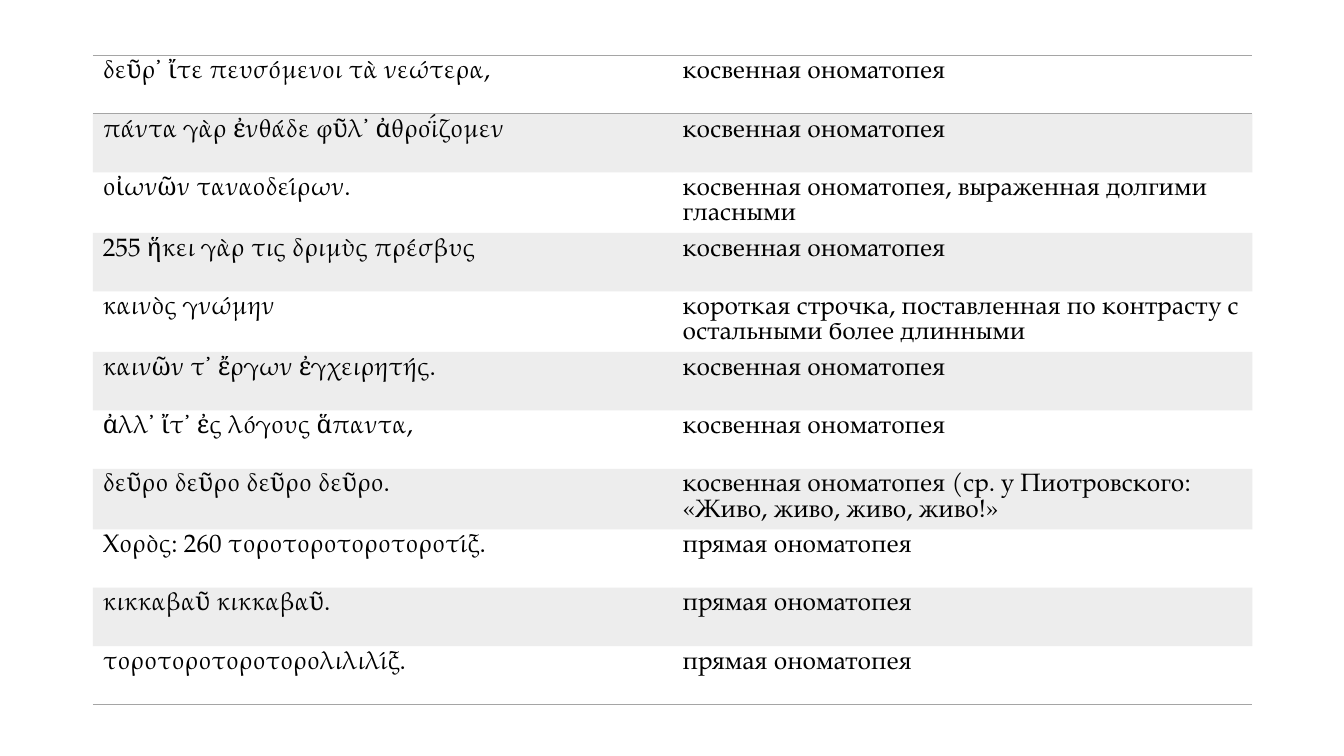
from lxml import etree
from pptx import Presentation
from pptx.dml.color import RGBColor
from pptx.oxml.ns import qn
from pptx.util import Pt

PX = 9144  # EMU, 100 px to the inch
BLACK = RGBColor(0x00, 0x00, 0x00)
GREY = RGBColor(0xA5, 0xA5, 0xA5)
FONT = "TeX Gyre Pagella"
NO_STYLE = "{2D5ABB26-0587-4C30-8999-92F81FD0307C}"
LEFT, TOP, COL_W, ROW_H = 92, 55, 575, 58

INDIRECT = "косвенная ономатопея"
DIRECT = "прямая ономатопея"
VERSES = [
    ("δεῦρ᾽ ἴτε πευσόμενοι τὰ νεώτερα,", INDIRECT),
    ("πάντα γὰρ ἐνθάδε φῦλ᾽ ἀθροΐζομεν", INDIRECT),
    ("οἰωνῶν ταναοδείρων.", INDIRECT + ", выраженная долгими гласными"),
    ("255 ἥκει γὰρ τις δριμὺς πρέσβυς", INDIRECT),
    ("καινὸς γνώμην",
     "короткая строчка, поставленная по контрасту с остальными более длинными"),
    ("καινῶν τ᾽ ἔργων ἐγχειρητής.", INDIRECT),
    ("ἀλλ᾽ ἴτ᾽ ἐς λόγους ἅπαντα,", INDIRECT),
    ("δεῦρο δεῦρο δεῦρο δεῦρο.",
     INDIRECT + " (ср. у Пиотровского: «Живо, живо, живо, живо!»"),
    ("Χορὸς: 260 τοροτοροτοροτοροτίξ.", DIRECT),
    ("κικκαβαῦ κικκαβαῦ.", DIRECT),
    ("τοροτοροτοροτορολιλιλίξ.", DIRECT),
]
BORDERS = {0: ["a:lnT", "a:lnB"], len(VERSES) - 1: ["a:lnB"]}


def add_borders(cell, tags):
    tcPr = cell._tc.get_or_add_tcPr()
    for i, tag in enumerate(tags):
        ln = etree.Element(qn(tag), w=str(Pt(1)))
        fill = etree.SubElement(ln, qn("a:solidFill"))
        etree.SubElement(fill, qn("a:srgbClr"), val=str(GREY))
        tcPr.insert(i, ln)


prs = Presentation()
prs.slide_width, prs.slide_height = 1333 * PX, 750 * PX
s = prs.slides.add_slide(prs.slide_layouts[6])

table = s.shapes.add_table(len(VERSES), 2, LEFT * PX, TOP * PX,
                           2 * COL_W * PX, len(VERSES) * ROW_H * PX).table
table._tbl.tblPr.find(qn("a:tableStyleId")).text = NO_STYLE
for col in table.columns:
    col.width = COL_W * PX

for row, verse in enumerate(VERSES):
    table.rows[row].height = ROW_H * PX
    for col, text in enumerate(verse):
        cell = table.cell(row, col)
        cell.text_frame.text = text
        p = cell.text_frame.paragraphs[0]
        p.line_spacing = Pt(18)
        font = p.runs[0].font
        font.name, font.size = FONT, Pt(18)
        font.color.rgb = BLACK
        if row % 2:
            cell.fill.solid()
            cell.fill.fore_color.rgb = GREY
            clr = cell._tc.tcPr.find(".//" + qn("a:srgbClr"))
            etree.SubElement(clr, qn("a:alpha"), val="20000")
        else:
            cell.fill.background()
        add_borders(cell, BORDERS.get(row, []))

prs.save("out.pptx")
